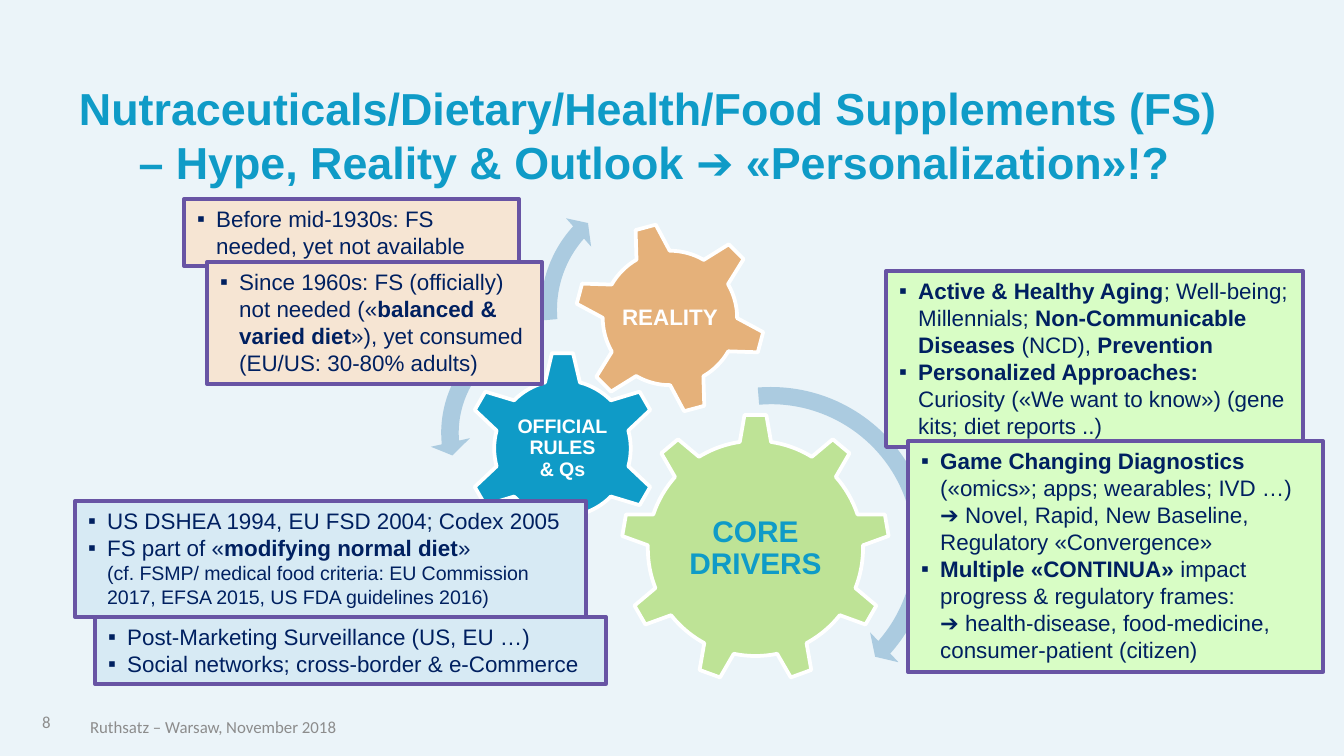
from pptx import Presentation
from pptx import util as u
from pptx.dml.color import RGBColor
from pptx.enum import shapes, text
from pptx.oxml.ns import qn
from lxml import etree

THEME = {
    "font": "Arial", "footer_font": "Calibri",
    "background": "EBF4F9", "accent": "0F9BC7", "white": "FFFFFF",
    "body": "002060", "muted": "8C8C8C", "frame": "6854A4", "arrow": "ABCBE0",
    "green": "BEE396", "orange": "E5B17A",
    "pale_green": "D8FDC5", "pale_blue": "D7EAF4", "pale_orange": "F6E5D3",
    "title_size": 24, "body_size": 12, "small_size": 10.5, "footer_size": 9,
    "line": 2, "indent": 19,
}
SLIDE = (1344, 756)
KIND = shapes.MSO_SHAPE

TITLE = ("Nutraceuticals/Dietary/Health/Food Supplements (FS) \n"
         "– Hype, Reality & Outlook ➔ «Personalization»!?")
TITLE_AREA = (38, 81, 1232, 47)

GEARS = [
    (KIND.GEAR_9, (621, 414, 269), 0, "green", "CORE\nDRIVERS", 161, 16, "accent"),
    (KIND.GEAR_6, (465, 351, 195), 0, "accent", "OFFICIAL\nRULES\n& Qs", 97, 10.5, "white"),
    (KIND.GEAR_6, (574, 222, 192), 345, "orange", "REALITY", 108, 12, "white"),
]
ARROWS = [
    (KIND.CIRCULAR_ARROW, (599, 375, 344), (0.05, 2.99, 24.91, 159.16, 0.06)),
    (KIND.LEFT_CIRCULAR_ARROW, (430, 308, 250), (0.07, 4.3, 104.89, 148.38, 0.08)),
    (KIND.CIRCULAR_ARROW, (530, 175, 270), (0.06, 3.94, 133.14, 105.08, 0.07)),
]
NOTES = [
    ((886, 271, 417, 176), "pale_green", [
        [("Active & Healthy Aging", "bold"), "; Well-being; Millennials; ",
         ("Non-Communicable Diseases ", "bold"), "(NCD), ", ("Prevention", "bold")],
        [("Personalized Approaches:", "bold"),
         "\nCuriosity («We want to know») (gene kits; diet reports ..)"],
    ]),
    ((75, 501, 511, 116), "pale_blue", [
        ["US DSHEA 1994, EU FSD 2004; Codex 2005"],
        ["FS part of «", ("modifying normal diet", "bold"), "» \n",
         ("(cf. FSMP/ medical food criteria: EU Commission 2017, "
          "EFSA 2015, US FDA guidelines 2016)", "small")],
    ]),
    ((184, 199, 335, 67), "pale_orange", [
        ["Before mid-1930s: FS needed, yet not available"],
    ]),
    ((95, 617, 511, 67), "pale_blue", [
        ["Post-Marketing Surveillance (US, EU …)"],
        ["Social networks; cross-border & e-Commerce"],
    ]),
    ((207, 262, 335, 122), "pale_orange", [
        ["Since 1960s: FS (officially) not needed («", ("balanced & varied diet", "bold"),
         "»), yet consumed (EU/US: 30-80% adults)"],
    ]),
    ((908, 441, 415, 231), "pale_green", [
        [("Game Changing Diagnostics ", "bold"),
         "(«omics»; apps; wearables; IVD …) ➔ Novel, Rapid, New Baseline, "
         "Regulatory «Convergence»"],
        [("Multiple «CONTINUA» ", "bold"),
         "impact progress & regulatory frames: \n"
         "➔ health-disease, food-medicine, consumer-patient (citizen)"],
    ]),
]
FOOTERS = [
    ((37, 710, 19, 24), "8"),
    ((55, 707, 316, 39), "Ruthsatz – Warsaw, November 2018"),
]


def px(n):
    return u.Emu(round(n * 914400 / 134.4))


def color(name):
    return RGBColor.from_string(THEME[name])


def style(paragraph, size, tint, bold=None, face="font"):
    font = paragraph.font
    font.name, font.size, font.bold = THEME[face], u.Pt(size), bold
    font.color.rgb = color(tint)


def add_preset(slide, kind, area, fill, line=None):
    shape = slide.shapes.add_shape(kind, *map(px, area))
    shape.shadow.inherit = False
    shape.fill.solid()
    shape.fill.fore_color.rgb = color(fill)
    if line:
        shape.line.color.rgb = color(line)
        shape.line.width = u.Pt(THEME["line"])
    else:
        shape.line.fill.background()
    return shape


def add_label(slide, area, words, size, tint, bold=None, face="font"):
    frame = slide.shapes.add_textbox(*map(px, area)).text_frame
    frame.margin_left = frame.margin_right = frame.margin_top = frame.margin_bottom = 0
    frame.word_wrap = True
    frame.vertical_anchor = text.MSO_ANCHOR.MIDDLE
    label = frame.paragraphs[0]
    label.text = words.replace("\n", "\v")
    label.alignment = text.PP_ALIGN.CENTER
    style(label, size, tint, bold, face)
    return label


def add_bullet(paragraph):
    props = paragraph._p.get_or_add_pPr()
    props.set("marL", str(px(THEME["indent"])))
    props.set("indent", str(-px(THEME["indent"])))
    etree.SubElement(props, qn("a:buFont")).set("typeface", THEME["font"])
    etree.SubElement(props, qn("a:buChar")).set("char", "▪")


def add_words(paragraph, words, emphasis):
    for i, part in enumerate(words.split("\n")):
        if i:
            paragraph.add_line_break()
        if part:
            run = paragraph.add_run()
            run.text = part
            if emphasis == "bold":
                run.font.bold = True
            elif emphasis == "small":
                run.font.size = u.Pt(THEME["small_size"])


def add_note(slide, area, fill, items):
    frame = add_preset(slide, KIND.RECTANGLE, area, fill, "frame").text_frame
    frame.word_wrap = True
    frame.vertical_anchor = text.MSO_ANCHOR.TOP
    for i, item in enumerate(items):
        paragraph = frame.add_paragraph() if i else frame.paragraphs[0]
        paragraph.alignment = text.PP_ALIGN.LEFT
        add_bullet(paragraph)
        style(paragraph, THEME["body_size"], "body")
        for part in item:
            words, emphasis = (part, None) if isinstance(part, str) else part
            add_words(paragraph, words, emphasis)


def add_title(slide):
    title = slide.shapes.title
    title.left, title.top, title.width, title.height = map(px, TITLE_AREA)
    frame = title.text_frame
    frame.margin_left = frame.margin_right = frame.margin_top = frame.margin_bottom = 0
    frame.word_wrap = True
    frame.auto_size = text.MSO_AUTO_SIZE.NONE
    frame.vertical_anchor = text.MSO_ANCHOR.TOP
    heading = frame.paragraphs[0]
    heading.text = TITLE.replace("\n", "\v")
    heading.alignment = text.PP_ALIGN.CENTER
    style(heading, THEME["title_size"], "accent", True)


def main():
    deck = Presentation()
    deck.slide_width, deck.slide_height = map(px, SLIDE)
    slide = deck.slides.add_slide(deck.slide_layouts[5])
    slide.background.fill.solid()
    slide.background.fill.fore_color.rgb = color("background")
    add_title(slide)
    for kind, (left, top, side), turn, fill, words, label_side, size, tint in GEARS:
        gear = add_preset(slide, kind, (left, top, side, side), fill, "white")
        gear.rotation = turn
        inset = (side - label_side) / 2
        area = (left + inset, top + inset, label_side, label_side)
        add_label(slide, area, words, size, tint, True).line_spacing = 0.9
    for kind, (left, top, side), bends in ARROWS:
        arrow = add_preset(slide, kind, (left, top, side, side), "arrow")
        for i, bend in enumerate(bends):
            arrow.adjustments[i] = bend
    for note in NOTES:
        add_note(slide, *note)
    for area, words in FOOTERS:
        add_label(slide, area, words, THEME["footer_size"], "muted", face="footer_font")
    deck.save("out.pptx")


if __name__ == "__main__":
    main()
